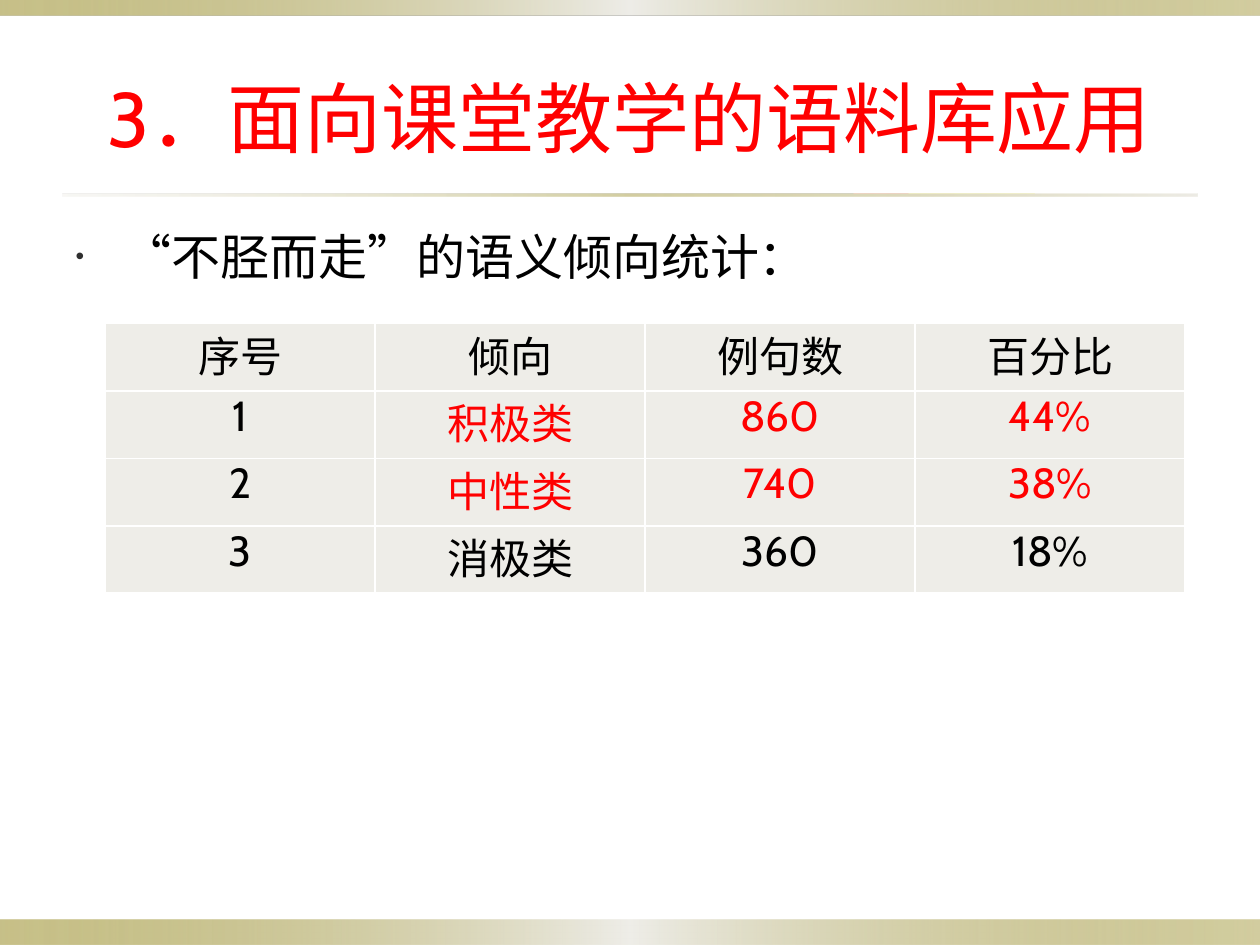
"""Build the slide on corpus use in classroom teaching."""
from dataclasses import dataclass

from lxml.etree import SubElement
from pptx import Presentation
from pptx.dml.color import RGBColor
from pptx.enum.shapes import MSO_SHAPE
from pptx.enum.text import MSO_ANCHOR, MSO_AUTO_SIZE, PP_ALIGN
from pptx.oxml import parse_xml
from pptx.oxml.ns import nsdecls, qn
from pptx.util import Pt

RED = RGBColor(0xFF, 0x00, 0x00)
BLACK = RGBColor(0x00, 0x00, 0x00)
WHITE = RGBColor(0xFF, 0xFF, 0xFF)
OLIVE = RGBColor(0x91, 0x84, 0x15)
PALE = RGBColor(0xEE, 0xED, 0xE8)
SAND = RGBColor(0xDC, 0xD9, 0xCC)
GREY = RGBColor(0x2F, 0x2F, 0x2F)
FONT = "Cabin"


@dataclass(frozen=True)
class Stop:
    position: int
    color: RGBColor
    opacity: int


@dataclass(frozen=True)
class Band:
    left: float
    top: float
    width: float
    height: float
    stops: tuple[Stop, ...]


EDGE_STOPS = (Stop(0, OLIVE, 50), Stop(50, PALE, 100), Stop(100, OLIVE, 40))
RULE_STOPS = (Stop(0, SAND, 20), Stop(50, OLIVE, 40), Stop(100, SAND, 50))
BANDS = (
    Band(0, 525.6, 720, 14.4, EDGE_STOPS),
    Band(0, 0, 720, 8.64, EDGE_STOPS),
    Band(36, 110.88, 648, 1.44, RULE_STOPS),
)
ROWS = (
    ("序号", "倾向", "例句数", "百分比"),
    ("1", "积极类", "860", "44%"),
    ("2", "中性类", "740", "38%"),
    ("3", "消极类", "360", "18%"),
)
HIGHLIGHTED_ROWS = (1, 2)


def set_values(target, values: dict) -> None:
    for name, value in values.items():
        setattr(target, name, value)


def write_text(frame, text: str, size: float, color: RGBColor, align: PP_ALIGN):
    para = frame.paragraphs[0]
    para.alignment = align
    span = para.add_run()
    span.text = text
    set_values(span.font, {"name": FONT, "size": Pt(size), "bold": False})
    span.font.color.rgb = color
    return para


def draw_band(page, band: Band) -> None:
    box = page.shapes.add_shape(
        MSO_SHAPE.RECTANGLE, Pt(band.left), Pt(band.top), Pt(band.width), Pt(band.height)
    )
    box.shadow.inherit = False
    box.line.fill.background()
    stops = "".join(
        f'<a:gs pos="{stop.position * 1000}"><a:srgbClr val="{stop.color}">'
        f'<a:alpha val="{stop.opacity * 1000}"/></a:srgbClr></a:gs>'
        for stop in band.stops
    )
    gradient = parse_xml(
        f'<a:gradFill {nsdecls("a")} rotWithShape="1"><a:gsLst>{stops}</a:gsLst>'
        '<a:lin ang="0" scaled="0"/></a:gradFill>'
    )
    box._element.spPr.find(qn("a:prstGeom")).addnext(gradient)


def place_text(box, place: tuple[float, ...], anchor: MSO_ANCHOR) -> None:
    set_values(box, dict(zip(("left", "top", "width", "height"), map(Pt, place))))
    set_values(
        box.text_frame,
        {"word_wrap": True, "auto_size": MSO_AUTO_SIZE.NONE, "vertical_anchor": anchor},
    )


def set_bullet(para) -> None:
    properties = para._p.get_or_add_pPr()
    set_values(properties, {"marL": Pt(27), "indent": Pt(-27)})
    properties.set("marL", str(Pt(27)))
    properties.set("indent", str(Pt(-27)))
    before = SubElement(properties, qn("a:spcBef"))
    SubElement(before, qn("a:spcPct"), val="20000")
    color = SubElement(properties, qn("a:buClr"))
    SubElement(color, qn("a:srgbClr"), val=str(GREY))
    SubElement(properties, qn("a:buSzPct"), val="50000")
    SubElement(properties, qn("a:buChar"), char="•")


def draw_borders(cell) -> None:
    properties = cell._tc.get_or_add_tcPr()
    for side in ("lnL", "lnR", "lnT", "lnB"):
        line = SubElement(properties, qn(f"a:{side}"), w=str(Pt(1)))
        fill = SubElement(line, qn("a:solidFill"))
        SubElement(fill, qn("a:srgbClr"), val=str(WHITE))


def draw_table(page) -> None:
    table = page.shapes.add_table(
        len(ROWS), len(ROWS[0]), Pt(60), Pt(185), Pt(617.2), Pt(154)
    ).table
    set_values(table, {"first_row": False, "horz_banding": False})
    margins = {"margin_left": Pt(5), "margin_right": Pt(5), "margin_top": 0, "margin_bottom": 0}
    for row, texts in enumerate(ROWS):
        for column, text in enumerate(texts):
            cell = table.cell(row, column)
            set_values(cell, margins)
            draw_borders(cell)
            cell.fill.solid()
            cell.fill.fore_color.rgb = PALE
            color = RED if row in HIGHLIGHTED_ROWS and column else BLACK
            write_text(cell.text_frame, text, 24, color, PP_ALIGN.CENTER)


def main() -> None:
    deck = Presentation()
    set_values(deck, {"slide_width": Pt(720), "slide_height": Pt(540)})
    page = deck.slides.add_slide(deck.slide_layouts[1])
    title, body = page.placeholders
    place_text(title, (36, 21.6, 648, 90), MSO_ANCHOR.MIDDLE)
    write_text(title.text_frame, "3．面向课堂教学的语料库应用", 44, RED, PP_ALIGN.CENTER)
    place_text(body, (36, 126, 648, 369.4), MSO_ANCHOR.TOP)
    set_bullet(write_text(body.text_frame, "“不胫而走”的语义倾向统计：", 28, BLACK, PP_ALIGN.LEFT))
    for band in BANDS:
        draw_band(page, band)
    draw_table(page)
    deck.save("out.pptx")


if __name__ == "__main__":
    main()
